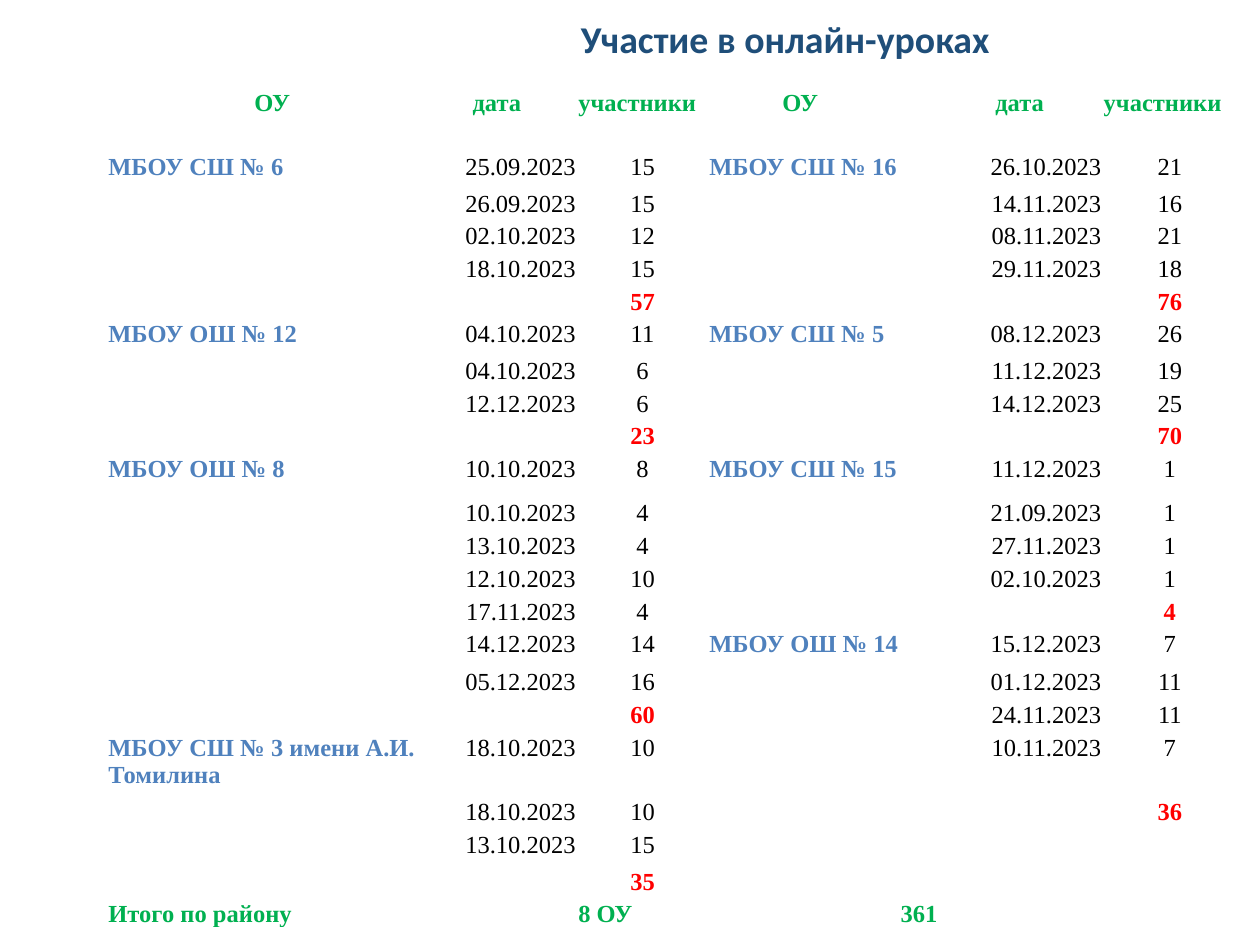
from dataclasses import dataclass
from lxml import etree
from pptx import Presentation
from pptx.dml.color import RGBColor
from pptx.enum.text import MSO_ANCHOR, PP_ALIGN
from pptx.oxml.ns import qn
from pptx.util import Inches, Pt

LEFT, CENTER, RIGHT = PP_ALIGN.LEFT, PP_ALIGN.CENTER, PP_ALIGN.RIGHT
TOP, MIDDLE, BOTTOM = MSO_ANCHOR.TOP, MSO_ANCHOR.MIDDLE, MSO_ANCHOR.BOTTOM


@dataclass(frozen=True)
class Theme:
    title_font: str = "Calibri"
    table_font: str = "Times New Roman"
    title_size: float = 21.6
    table_size: float = 14
    navy: str = "1F4E79"
    green: str = "00B050"
    blue: str = "4F81BD"
    red: str = "FF0000"
    black: str = "000000"


THEME = Theme()
COLUMN_WIDTHS = [2.5, 1.23, 1.04, 1.83, 1.3, 1.07]
ROW_HEIGHT = 0.26
TALL_ROWS = {0: 0.51, 1: 0.29, 6: 0.29, 10: 0.35, 15: 0.3, 18: 0.51}
ROW_COUNT = 23
SUMMARY_ROW = ROW_COUNT - 1
HEADERS = [("ОУ", 1.17), ("дата", 0.4), ("участники", 0.01),
           ("ОУ", 0.59), ("дата", 0.45), ("участники", 0.01)]

LEFT_SCHOOLS = [
    ("МБОУ СШ № 6", [("25.09.2023", 15), ("26.09.2023", 15),
                     ("02.10.2023", 12), ("18.10.2023", 15)]),
    ("МБОУ ОШ № 12", [("04.10.2023", 11), ("04.10.2023", 6), ("12.12.2023", 6)]),
    ("МБОУ ОШ № 8", [("10.10.2023", 8), ("10.10.2023", 4), ("13.10.2023", 4),
                     ("12.10.2023", 10), ("17.11.2023", 4),
                     ("14.12.2023", 14), ("05.12.2023", 16)]),
    ("МБОУ СШ № 3 имени А.И. Томилина",
     [("18.10.2023", 10), ("18.10.2023", 10), ("13.10.2023", 15)]),
]
RIGHT_SCHOOLS = [
    ("МБОУ СШ № 16", [("26.10.2023", 21), ("14.11.2023", 16),
                      ("08.11.2023", 21), ("29.11.2023", 18)]),
    ("МБОУ СШ № 5", [("08.12.2023", 26), ("11.12.2023", 19), ("14.12.2023", 25)]),
    ("МБОУ СШ № 15", [("11.12.2023", 1), ("21.09.2023", 1),
                      ("27.11.2023", 1), ("02.10.2023", 1)]),
    ("МБОУ ОШ № 14", [("15.12.2023", 7), ("01.12.2023", 11),
                      ("24.11.2023", 11), ("10.11.2023", 7)]),
]


def write(frame, text, *, font, size, color, bold=False, align=LEFT, spacing=None):
    paragraph = frame.paragraphs[0]
    paragraph.alignment = align
    if spacing:
        paragraph.line_spacing = spacing
    run = paragraph.add_run()
    run.text = text
    run.font.name = font
    run.font.size = Pt(size)
    run.font.bold = bold
    run.font.color.rgb = RGBColor.from_string(color)


class SlideBuilder:
    def __init__(self, slide, theme):
        self.slide = slide
        self.theme = theme

    def title(self, text, left, top, width, height, indent):
        heading = self.slide.shapes.add_textbox(
            Inches(left), Inches(top), Inches(width), Inches(height))
        frame = heading.text_frame
        frame.word_wrap = True
        frame.vertical_anchor = MIDDLE
        frame.margin_left = Inches(indent)
        frame.margin_top = frame.margin_bottom = 0
        write(frame, text, font=self.theme.title_font, size=self.theme.title_size,
              color=self.theme.navy, bold=True, spacing=0.9)

    def table(self, left, top, widths, heights):
        frame = self.slide.shapes.add_table(
            len(heights), len(widths), Inches(left), Inches(top),
            Inches(sum(widths)), Inches(sum(heights)))
        table = frame.table
        table.first_row = table.horz_banding = False
        for column, width in zip(table.columns, widths):
            column.width = Inches(width)
        for row, height in zip(table.rows, heights):
            row.height = Inches(height)
        for cell in table.iter_cells():
            cell.fill.background()
            cell.margin_left = cell.margin_right = cell.margin_top = Inches(0.01)
            cell.margin_bottom = 0
            end = etree.SubElement(cell.text_frame.paragraphs[0]._p, qn("a:endParaRPr"))
            end.set("sz", str(self.theme.table_size * 100))
        return table

    def cell(self, table, row, column, text, color, bold=True, align=LEFT,
             anchor=TOP, indent=0.01):
        cell = table.cell(row, column)
        cell.vertical_anchor = anchor
        cell.margin_left = Inches(indent)
        write(cell.text_frame, text, font=self.theme.table_font,
              size=self.theme.table_size, color=color, bold=bold, align=align)

    def schools(self, table, schools, first_column):
        name_column, date_column, count_column = range(first_column, first_column + 3)
        row = 1
        for school, lessons in schools:
            self.cell(table, row, name_column, school, self.theme.blue)
            for date, participants in lessons:
                self.cell(table, row, date_column, date, self.theme.black,
                          bold=False, align=RIGHT)
                self.cell(table, row, count_column, str(participants),
                          self.theme.black, bold=False, align=CENTER)
                row += 1
            subtotal = sum(participants for _, participants in lessons)
            anchor = BOTTOM if row == SUMMARY_ROW - 1 else TOP
            self.cell(table, row, count_column, str(subtotal), self.theme.red,
                      align=CENTER, anchor=anchor)
            row += 1


def main():
    presentation = Presentation()
    presentation.slide_width = Inches(10)
    presentation.slide_height = Inches(7.5)
    slide = presentation.slides.add_slide(presentation.slide_layouts[6])
    builder = SlideBuilder(slide, THEME)

    builder.title("Участие в онлайн-уроках", 3.63, 0.18, 5.69, 0.3, indent=0.98)

    heights = [TALL_ROWS.get(row, ROW_HEIGHT) for row in range(ROW_COUNT)]
    lessons_table = builder.table(0.85, 0.7, COLUMN_WIDTHS, heights)
    for column, (header, indent) in enumerate(HEADERS):
        builder.cell(lessons_table, 0, column, header, THEME.green, indent=indent)
    builder.schools(lessons_table, LEFT_SCHOOLS, 0)
    builder.schools(lessons_table, RIGHT_SCHOOLS, 3)

    all_schools = LEFT_SCHOOLS + RIGHT_SCHOOLS
    district_total = sum(count for _, lessons in all_schools for _, count in lessons)
    summary = [(0, "Итого по району", LEFT), (2, f"{len(all_schools)} ОУ", LEFT),
               (3, str(district_total), RIGHT)]
    for column, text, align in summary:
        builder.cell(lessons_table, SUMMARY_ROW, column, text, THEME.green,
                     align=align, anchor=BOTTOM)

    presentation.save("out.pptx")


if __name__ == "__main__":
    main()
